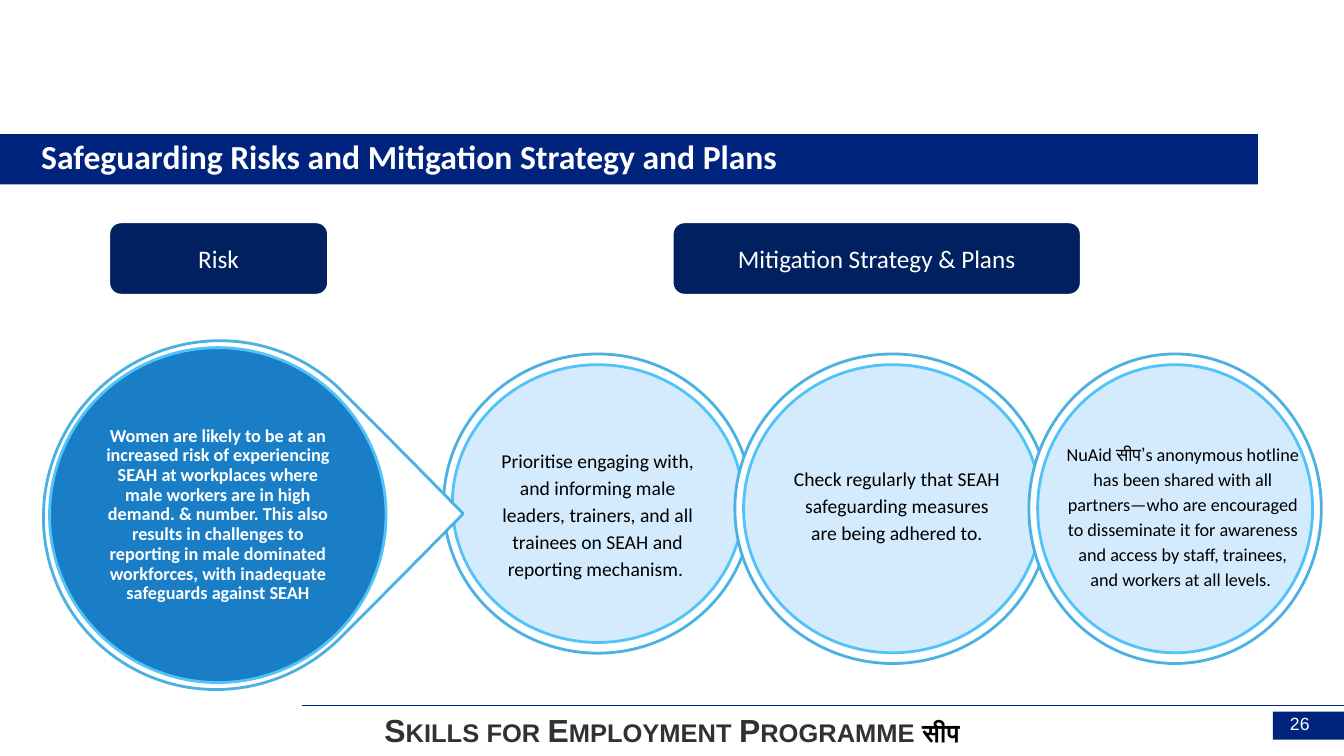
from pptx import Presentation
from pptx.dml.color import RGBColor
from pptx.enum.shapes import MSO_CONNECTOR, MSO_SHAPE
from pptx.enum.text import MSO_ANCHOR as Anchor, PP_ALIGN as Align
from pptx.oxml.ns import qn
from pptx.util import Cm, Pt
from lxml.etree import SubElement

WHITE = RGBColor(0xFF, 0xFF, 0xFF)
BLACK = RGBColor(0x00, 0x00, 0x00)
CHARCOAL = RGBColor(0x32, 0x31, 0x32)
BAND_BLUE = RGBColor(0x00, 0x24, 0x7D)
LABEL_NAVY = RGBColor(0x00, 0x20, 0x60)
RING_BLUE = RGBColor(0x4A, 0xB1, 0xE2)
DISC_EDGE = RGBColor(0x51, 0xC3, 0xF9)
RISK_BLUE = RGBColor(0x00, 0x70, 0xC0)
PLAN_BLUE = RGBColor(0xD0, 0xE9, 0xFD)

SLIDE_W, SLIDE_H = 33.87, 19.05
RING_GAP_X, RING_GAP_Y = 0.22, 0.27

RISK = ("Women are likely to be at an increased risk of experiencing SEAH at "
        "workplaces where male workers are in high demand. & number. This also "
        "results in challenges to reporting in male dominated workforces, with "
        "inadequate safeguards against SEAH")

# ring box, text width, text shift from the ring's centre, text size, wording
PLANS = [
    ((11.18, 8.92, 7.77, 7.54), 5.54, (0, 0.23), 14,
     "Prioritise engaging with, and informing male leaders, trainers, and all "
     "trainees on SEAH and reporting mechanism. "),
    ((18.52, 8.92, 7.95, 7.8), 5.31, (0.11, -0.13), 14,
     "Check regularly that SEAH safeguarding measures are being adhered to."),
    ((25.93, 8.92, 7.37, 7.8), 6.05, (0.19, 0.16), 13,
     "NuAid सीप’s anonymous hotline has been shared with all partners—who are "
     "encouraged to disseminate it for awareness and access by staff, trainees, "
     "and workers at all levels. "),
]


def cm_box(box):
    return [Cm(length) for length in box]


def add_panel(slide, kind, box, fill, edge=None, opacity=None):
    panel = slide.shapes.add_shape(kind, *cm_box(box))
    panel.shadow.inherit = False
    panel.fill.solid()
    panel.fill.fore_color.rgb = fill
    if opacity is not None:
        color = panel.fill._xPr.find(qn("a:solidFill"))[0]
        SubElement(color, qn("a:alpha")).set("val", str(opacity * 1000))
    if edge is None:
        panel.line.fill.background()
    else:
        panel.line.color.rgb = edge
        panel.line.width = Pt(2)
    return panel


def write_text(holder, text, size, color, font="Calibri", bold=False,
               align=Align.CENTER, anchor=Anchor.MIDDLE, insets=(0.05, 0.05),
               spacing=None, small_caps=False):
    """Append a run to the first paragraph of the holder."""
    frame = holder.text_frame
    frame.word_wrap = True
    frame.vertical_anchor = anchor
    frame.margin_left = frame.margin_right = Cm(insets[0])
    frame.margin_top = frame.margin_bottom = Cm(insets[1])
    paragraph = frame.paragraphs[0]
    paragraph.alignment = align
    if spacing:
        paragraph.line_spacing = spacing
    run = paragraph.add_run()
    run.text = text
    run.font.size = Pt(size)
    run.font.name = font
    run.font.bold = bold
    run.font.color.rgb = color
    if small_caps:
        run._r.get_or_add_rPr().set("cap", "small")


def add_title_band(slide, box):
    left, top, width, height = box
    add_panel(slide, MSO_SHAPE.RECTANGLE, box, BAND_BLUE)
    title = slide.shapes.add_textbox(
        *cm_box((left + 0.76, top - 0.18, width - 0.9, height + 0.13)))
    write_text(title, "Safeguarding Risks and Mitigation Strategy and Plans", 24,
               WHITE, bold=True, align=Align.LEFT, anchor=Anchor.BOTTOM,
               insets=(0.28, 0.15))


def add_footer(slide, box):
    left, top, width, height = box
    right = left + width
    rule = slide.shapes.add_connector(
        MSO_CONNECTOR.STRAIGHT, *cm_box((left, top, right, top)))
    rule.line.color.rgb = BAND_BLUE
    rule.line.width = Pt(0.75)
    SubElement(rule._element.spPr, qn("a:effectLst"))

    add_panel(slide, MSO_SHAPE.RECTANGLE,
              (right - 1.79, top + 0.15, 1.79, 0.71), BAND_BLUE)
    number = slide.shapes.add_textbox(*cm_box((right - 1.69, top, 1.69, 0.86)))
    write_text(number, "26", 12.6, WHITE, font="Arial", align=Align.LEFT,
               anchor=Anchor.TOP, insets=(0.33, 0.18))

    programme = slide.shapes.add_textbox(
        *cm_box((left - 0.46, top + 0.05, 19.56, height - 0.05)))
    style = dict(font="Arial", bold=True, anchor=Anchor.BOTTOM, insets=(0.33, 0.18))
    write_text(programme, "Skills for Employment Programme ", 22.8, CHARCOAL,
               small_caps=True, **style)
    write_text(programme, "सीप", 18.1, BLACK, **style)


def add_heading(slide, box, text):
    heading = add_panel(slide, MSO_SHAPE.ROUNDED_RECTANGLE, box, LABEL_NAVY, WHITE)
    write_text(heading, text, 18, WHITE)


def add_plan(slide, box, text_width, shift, size, text):
    left, top, width, height = box
    add_panel(slide, MSO_SHAPE.OVAL, box, WHITE, RING_BLUE)
    disc = (left + RING_GAP_X, top + RING_GAP_Y,
            width - 2 * RING_GAP_X, height - 2 * RING_GAP_Y)
    add_panel(slide, MSO_SHAPE.OVAL, disc, PLAN_BLUE, DISC_EDGE, opacity=90)
    text_height = 4.06
    plan = slide.shapes.add_textbox(*cm_box((
        left + (width - text_width) / 2 + shift[0],
        top + (height - text_height) / 2 + shift[1], text_width, text_height)))
    write_text(plan, text, size, BLACK, spacing=1.15)


def add_risk(slide, box):
    left, top, width, height = box
    drop = add_panel(slide, MSO_SHAPE.TEAR, box, WHITE, RING_BLUE)
    drop.rotation = 45
    drop.adjustments[0] = 0.995
    disc = add_panel(slide, MSO_SHAPE.OVAL,
                     (left + 0.13, top + 0.2, width - 0.26, height - 0.4),
                     RISK_BLUE, DISC_EDGE, opacity=90)
    # The oval already insets its text area, so only a small margin is needed.
    write_text(disc, RISK, 13, WHITE, bold=True, spacing=0.9, insets=(0, 0))


def main():
    deck = Presentation()
    deck.slide_width, deck.slide_height = Cm(SLIDE_W), Cm(SLIDE_H)
    slide = deck.slides.add_slide(deck.slide_layouts[6])
    add_footer(slide, (7.62, 17.78, SLIDE_W - 7.62, SLIDE_H - 17.78))
    add_title_band(slide, (0, 3.38, 31.7, 1.27))
    for plan in PLANS:
        add_plan(slide, *plan)
    add_risk(slide, (1.12, 8.56, 8.74, 8.84))
    add_heading(slide, (2.74, 5.59, 5.54, 1.85), "Risk")
    add_heading(slide, (16.94, 5.59, 10.31, 1.85), "Mitigation Strategy & Plans")
    deck.save("out.pptx")


if __name__ == "__main__":
    main()
